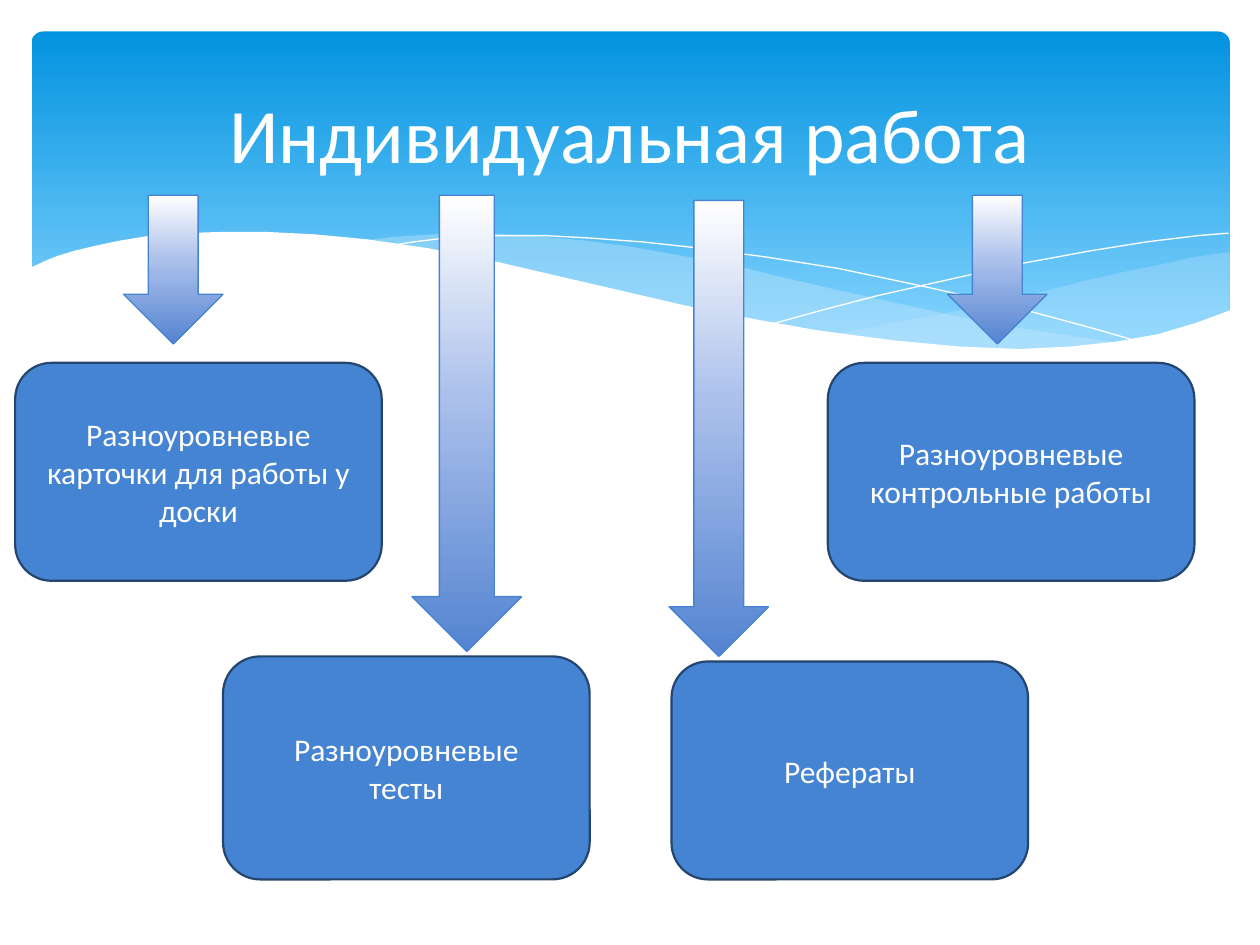
"""Build the slide on individual work: a wave banner, four arrows and four boxes."""
from lxml.etree import SubElement
from pptx import Presentation
from pptx.dml.color import RGBColor
from pptx.enum.shapes import MSO_SHAPE as Shape
from pptx.enum.text import MSO_ANCHOR as Anchor, PP_ALIGN as Align
from pptx.oxml.ns import qn
from pptx.util import Inches, Pt

WHITE = RGBColor(0xFF, 0xFF, 0xFF)
MIST = RGBColor(0xC6, 0xE7, 0xFC)
BLUE = RGBColor(0x45, 0x84, 0xD3)
NAVY = RGBColor(0x24, 0x45, 0x6E)
SKY = [(0, RGBColor(0x02, 0x93, 0xE0)), (90, RGBColor(0x83, 0xD3, 0xFE))]
FADE = [(0, WHITE), (44, RGBColor(0xAB, 0xC0, 0xEB)),
        (100, RGBColor(0x54, 0x84, 0xD1))]
FONT = "Calibri"

TITLE = "Индивидуальная работа"
ARROWS = [(0.98, 1.55, 0.79, 1.18), (3.27, 1.55, 0.87, 3.62),
          (5.31, 1.59, 0.79, 3.62), (7.52, 1.55, 0.79, 1.18)]
BOXES = [
    ((0.12, 2.88, 2.91, 1.73), ["Разноуровневые карточки для работы у доски"]),
    ((1.77, 5.21, 2.91, 1.77), ["Разноуровневые", "тесты"]),
    ((5.33, 5.25, 2.83, 1.73), ["Рефераты"]),
    ((6.57, 2.88, 2.91, 1.73), ["Разноуровневые", "контрольные работы"]),
]

UNIT = Inches(0.01)
RIGHT = [(976, 200), (948, 204), (921, 210), (891, 216), (861, 223), (805, 237),
         (753, 248), (706, 257), (661, 265), (691, 269), (732, 274), (769, 277),
         (803, 278), (844, 277), (881, 273), (913, 267), (942, 259), (963, 252),
         (976, 247)]
MIDDLE = [(893, 273), (866, 269), (807, 260), (741, 247), (668, 231), (629, 222),
          (584, 211), (541, 203), (502, 196), (465, 191), (420, 187), (380, 185),
          (344, 186), (313, 188), (286, 191), (323, 196), (362, 203), (404, 211),
          (449, 222), (530, 240), (601, 255), (650, 264), (695, 270), (736, 275),
          (773, 277), (807, 278), (848, 277), (876, 275)]
FRONT = [(977, 246), (950, 256), (920, 265), (887, 271), (850, 275), (809, 277),
         (761, 275), (708, 270), (648, 262), (603, 254), (555, 245), (503, 233),
         (447, 220), (391, 207), (340, 197), (292, 190), (250, 186), (211, 184),
         (177, 184), (146, 185), (119, 187), (95, 191), (76, 195), (59, 199),
         (46, 203), (36, 207), (23, 213), (23, 329), (977, 329)]
FALL = [(309, 195), (328, 192), (353, 189), (387, 187), (433, 187), (469, 189),
        (510, 192), (556, 197), (608, 204), (665, 213), (727, 226), (795, 241),
        (869, 261), (907, 272)]
RISE = [(613, 257), (653, 246), (695, 235), (748, 223), (806, 210), (866, 199),
        (910, 192), (951, 187), (975, 185)]


def blend(shape, stops):
    shape.fill.gradient()
    shape.fill.gradient_angle = 270
    rack = shape.element.spPr.find(qn("a:gradFill")).find(qn("a:gsLst"))
    for old in list(rack):
        rack.remove(old)
    for spot, color in stops:
        stop = SubElement(rack, qn("a:gs"), pos=str(spot * 1000))
        SubElement(stop, qn("a:srgbClr"), val=str(color))


def edge(shape, color, width):
    shape.line.color.rgb = color
    shape.line.width = Pt(width)


def add(shapes, kind, place):
    shape = shapes.add_shape(kind, *map(Inches, place))
    shape.shadow.inherit = False
    return shape


def trace(shapes, points, close):
    pen = shapes.build_freeform(*points[0], scale=UNIT)
    pen.add_line_segments(points[1:], close=close)
    shape = pen.convert_to_shape()
    shape.shadow.inherit = False
    return shape


def area(shapes, points, color, alpha):
    shape = trace(shapes, points, True)
    shape.fill.solid()
    shape.fill.fore_color.rgb = color
    shape.line.fill.background()
    if alpha < 100:
        tint = shape.element.spPr.find(qn("a:solidFill"))[0]
        SubElement(tint, qn("a:alpha"), val=str(alpha * 1000))


def curve(shapes, points):
    shape = trace(shapes, points, False)
    shape.fill.background()
    edge(shape, WHITE, 0)


def write(shape, lines, size):
    frame = shape.text_frame
    frame.word_wrap = True
    frame.vertical_anchor = Anchor.MIDDLE
    frame.text = "\n".join(lines)
    for para in frame.paragraphs:
        para.alignment = Align.CENTER
        para.font.name = FONT
        para.font.size = Pt(size)
        para.font.color.rgb = WHITE


def main():
    deck = Presentation()
    deck.slide_width, deck.slide_height = Inches(10), Inches(7.5)
    shapes = deck.slides.add_slide(deck.slide_layouts[6]).shapes

    banner = add(shapes, Shape.ROUNDED_RECTANGLE, (0.25, 0.25, 9.51, 2.7))
    banner.adjustments[0] = 0.034
    blend(banner, SKY)
    banner.line.fill.background()
    area(shapes, RIGHT, MIST, 29)
    area(shapes, MIDDLE, MIST, 40)
    curve(shapes, FALL)
    curve(shapes, RISE)
    area(shapes, FRONT, WHITE, 100)

    title = shapes.add_textbox(*map(Inches, (0.5, 0.37, 9, 1.37)))
    write(title, [TITLE], 44)

    for place in ARROWS:
        arrow = add(shapes, Shape.DOWN_ARROW, place)
        blend(arrow, FADE)
        edge(arrow, BLUE, 0.75)

    for place, lines in BOXES:
        box = add(shapes, Shape.ROUNDED_RECTANGLE, place)
        box.fill.solid()
        box.fill.fore_color.rgb = BLUE
        edge(box, NAVY, 1.25)
        write(box, lines, 18)

    deck.save("out.pptx")


if __name__ == "__main__":
    main()
